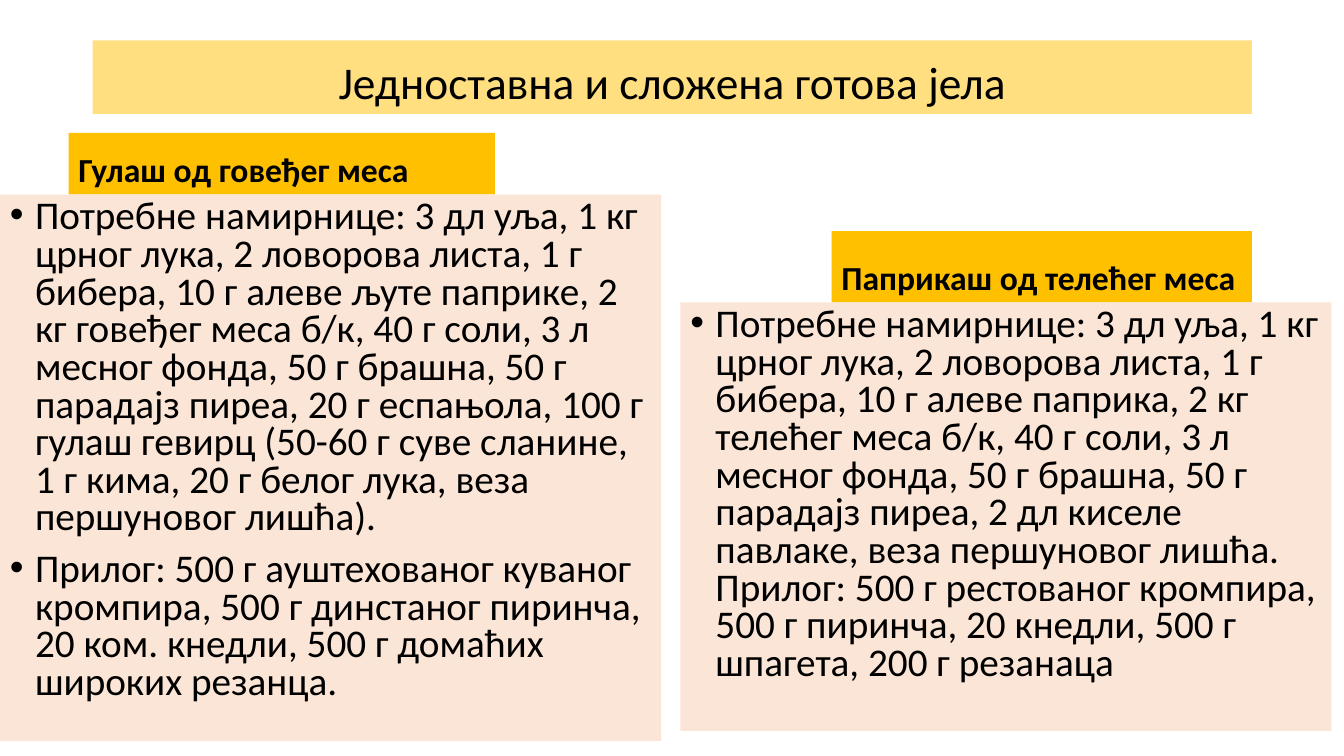
"""Build a slide with two recipes under one title."""
from dataclasses import dataclass

import lxml.etree
import pptx
import pptx.dml.color
import pptx.enum.shapes
import pptx.enum.text
import pptx.oxml.ns
import pptx.presentation
import pptx.shapes.autoshape
import pptx.slide
import pptx.text.text
import pptx.util

Pt = pptx.util.Pt
Align = pptx.enum.text.PP_ALIGN
Anchor = pptx.enum.text.MSO_ANCHOR
qn = pptx.oxml.ns.qn

GOLD = "FFC000"
PEACH = "FBE5D6"
BLACK = "000000"
INDENT = 18


@dataclass(frozen=True)
class Style:
    """Look of a panel and its text."""
    fill: str
    size: float
    bold: bool = False
    align: Align = Align.LEFT
    anchor: Anchor = Anchor.BOTTOM
    line: float = 0.9
    before: float = 10
    after: float = 0
    bullet: bool = False
    alpha: int = 100


@dataclass(frozen=True)
class Panel:
    """Filled box with its place in points and its paragraphs."""
    left: float
    top: float
    width: float
    height: float
    style: Style
    lines: tuple[str, ...]


TITLE = Style(GOLD, 32.4, align=Align.CENTER, before=0, after=6, alpha=50)
HEAD = Style(GOLD, 24, bold=True)
BODY = Style(PEACH, 28, anchor=Anchor.TOP, line=0.8, bullet=True)

PANELS = (
    Panel(49, 95, 304.6, 44, HEAD, ("Гулаш од говеђег меса",)),
    Panel(0, 139, 472.3, 390.2, BODY, (
        "Потребне намирнице: 3 дл уља, 1 кг црног лука, 2 ловорова листа, "
        "1 г бибера, 10 г алеве љуте паприке, 2 кг говеђег меса б/к, "
        "40 г соли, 3 л месног фонда, 50 г брашна, 50 г парадајз пиреа, "
        "20 г еспањола, 100 г гулаш гевирц (50-60 г суве сланине, "
        "1 г кима, 20 г белог лука, веза першуновог лишћа).",
        "Прилог: 500 г ауштехованог куваног кромпира, 500 г динстаног "
        "пиринча, 20 ком. кнедли, 500 г домаћих широких резанца.",
    )),
    Panel(594, 165, 300.2, 51, HEAD, ("Паприкаш од телећег меса",)),
    Panel(486, 216, 465.1, 306, BODY, (
        "Потребне намирнице: 3 дл уља, 1 кг црног лука, 2 ловорова листа, "
        "1 г бибера, 10 г алеве паприка, 2 кг телећег меса б/к, "
        "40 г соли, 3 л месног фонда, 50 г брашна, 50 г парадајз пиреа, "
        "2 дл киселе павлаке, веза першуновог лишћа. "
        "Прилог: 500 г рестованог кромпира, 500 г пиринча, 20 кнедли, "
        "500 г шпагета, 200 г резанаца",
    )),
    Panel(66.2, 28.8, 828, 52.6, TITLE,
          ("Једноставна и сложена готова јела",)),
)


def tint(code: str) -> pptx.dml.color.RGBColor:
    """Turn a hex string into a colour."""
    return pptx.dml.color.RGBColor.from_string(code)


def fade(shape: pptx.shapes.autoshape.Shape, alpha: int) -> None:
    """Set the opacity of a solid fill in percent."""
    color = shape.fill._xPr.find(qn("a:solidFill")).find(qn("a:srgbClr"))
    lxml.etree.SubElement(color, qn("a:alpha"), val=str(alpha * 1000))


def dot(para: pptx.text.text._Paragraph) -> None:
    """Give a paragraph a hanging bullet."""
    props = para._p.get_or_add_pPr()
    props.set("marL", str(Pt(INDENT)))
    props.set("indent", str(-Pt(INDENT)))
    lxml.etree.SubElement(props, qn("a:buFont"), typeface="Arial")
    lxml.etree.SubElement(props, qn("a:buChar"), char="•")


def dress(para: pptx.text.text._Paragraph, style: Style) -> None:
    """Format a paragraph and its runs."""
    para.alignment = style.align
    para.line_spacing = style.line
    para.space_before = Pt(style.before)
    para.space_after = Pt(style.after)
    if style.bullet:
        dot(para)
    for run in para.runs:
        run.font.name = "Calibri"
        run.font.size = Pt(style.size)
        run.font.bold = style.bold
        run.font.color.rgb = tint(BLACK)


def draw(slide: pptx.slide.Slide, panel: Panel) -> None:
    """Add one panel to the slide."""
    style = panel.style
    shape = slide.shapes.add_shape(
        pptx.enum.shapes.MSO_SHAPE.RECTANGLE,
        Pt(panel.left), Pt(panel.top), Pt(panel.width), Pt(panel.height))
    shape.shadow.inherit = False
    shape.line.fill.background()
    shape.fill.solid()
    shape.fill.fore_color.rgb = tint(style.fill)
    if style.alpha < 100:
        fade(shape, style.alpha)
    frame = shape.text_frame
    frame.word_wrap = True
    frame.vertical_anchor = style.anchor
    frame.text = "\n".join(panel.lines)
    for para in frame.paragraphs:
        dress(para, style)


def main() -> None:
    """Make the deck and save it."""
    deck = pptx.Presentation()
    deck.slide_width, deck.slide_height = Pt(960), Pt(540)
    slide = deck.slides.add_slide(deck.slide_layouts[6])
    for panel in PANELS:
        draw(slide, panel)
    deck.save("out.pptx")


if __name__ == "__main__":
    main()
